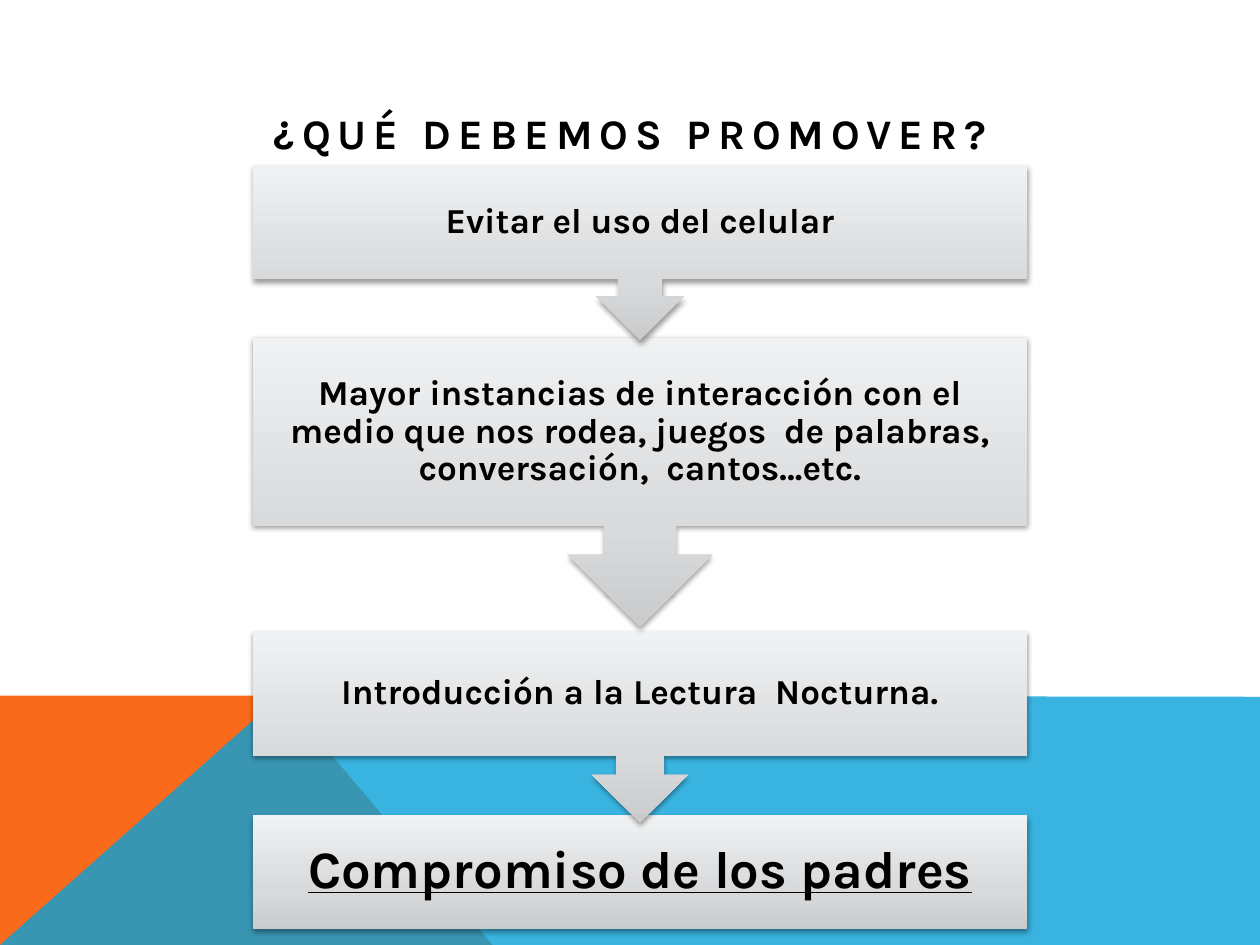
"""Build a slide with a downward flow of four things to promote."""
from lxml import etree
from copy import deepcopy
from pptx import Presentation
from pptx import util as u
from pptx.dml.color import RGBColor
from pptx.enum import shapes, text
from pptx.oxml.ns import qn


def color(value):
    return RGBColor.from_string(value)


def write(paragraph, words, size):
    paragraph.alignment = text.PP_ALIGN.CENTER
    span = paragraph.add_run()
    span.text = words
    span.font.name = "Karla"
    span.font.size = u.Pt(size)
    span.font.bold = True
    span.font.color.rgb = color("000000")
    return span


deck = Presentation()
deck.slide_width, deck.slide_height = u.Inches(10), u.Inches(7.5)
page = deck.slides.add_slide(deck.slide_layouts[5])

bands = [
    ("F96A1B", 100, [(0, 7.5), (0, 5.52), (2.23, 5.52), (3.91, 7.5)]),
    ("08A1D9", 80, [(0, 7.5), (2.23, 5.52), (10, 5.53), (10, 7.5)]),
]
for fill, opacity, corners in bands:
    points = [(u.Inches(x), u.Inches(y)) for x, y in corners]
    builder = page.shapes.build_freeform(*points[0])
    builder.add_line_segments(points[1:], close=True)
    band = builder.convert_to_shape()
    band.shadow.inherit = False
    band.fill.solid()
    band.fill.fore_color.rgb = color(fill)
    band.line.fill.background()
    if opacity < 100:
        tint = band.element.spPr.find(".//" + qn("a:srgbClr"))
        etree.SubElement(tint, qn("a:alpha"), val=str(opacity * 1000))

title = page.shapes.title
title.left, title.top = u.Inches(1.89), u.Inches(0.36)
title.width, title.height = u.Inches(6.22), u.Inches(0.94)
title.text_frame.vertical_anchor = text.MSO_ANCHOR.BOTTOM
para = title.text_frame.paragraphs[0]
para.space_before = u.Pt(8)
heading = write(para, "¿QUÉ DEBEMOS PROMOVER?", 24)
heading.font._element.set("spc", "400")

callout = shapes.MSO_SHAPE.DOWN_ARROW_CALLOUT
rectangle = shapes.MSO_SHAPE.RECTANGLE
steps = [
    (rectangle, 6.47, 0.9, 0.23, 30, "Compromiso de los padres"),
    (callout, 5.01, 1.52, 0.16, 20, "Introducción a la Lectura  Nocturna."),
    (callout, 2.68, 2.3, 0.16, 20,
     "Mayor instancias de interacción con el medio que nos rodea, "
     "juegos  de palabras, conversación,  cantos…etc."),
    (callout, 1.31, 1.39, 0.16, 20, "Evitar el uso del celular"),
]
grays = [(0, "C9CBCD"), (0.35, "D9DADC"), (1, "F0F1F2")]
for kind, top, height, inset, size, words in steps:
    box = page.shapes.add_shape(
        kind, u.Inches(2.01), u.Inches(top), u.Inches(6.14), u.Inches(height))
    box.line.fill.background()

    box.fill.gradient()
    box.fill.gradient_angle = 90
    stop_list = box.element.spPr.find(".//" + qn("a:gsLst"))
    stop_list.append(deepcopy(stop_list[0]))
    for stop, (position, gray) in zip(box.fill.gradient_stops, grays):
        stop.position = position
        stop.color.rgb = color(gray)

    box.shadow.inherit = False
    effects = box.element.spPr.find(qn("a:effectLst"))
    shadow = etree.SubElement(
        effects, qn("a:outerShdw"), blurRad=str(u.Pt(3.1)),
        dist=str(u.Pt(1.6)), dir="5400000", rotWithShape="0")
    shade = etree.SubElement(shadow, qn("a:srgbClr"), val="000000")
    etree.SubElement(shade, qn("a:alpha"), val="38000")

    frame = box.text_frame
    frame.word_wrap = True
    frame.vertical_anchor = text.MSO_ANCHOR.MIDDLE
    frame.margin_left = frame.margin_right = u.Inches(inset)
    frame.margin_top = frame.margin_bottom = u.Inches(inset)
    para = frame.paragraphs[0]
    para.line_spacing = 0.9
    span = write(para, words, size)
    span.font.underline = kind == rectangle

deck.save("out.pptx")
